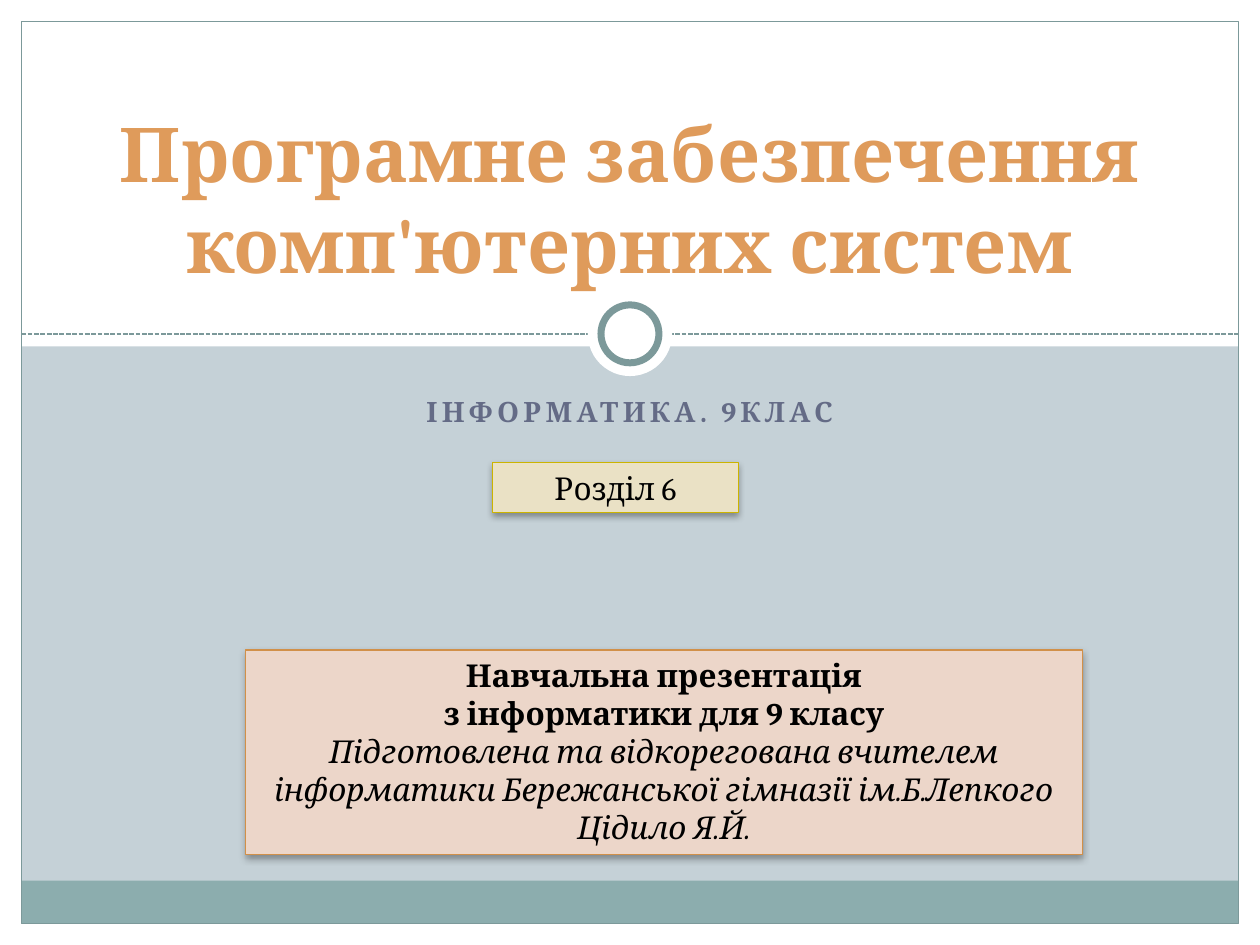
from dataclasses import dataclass

from lxml import etree
from pptx import Presentation
from pptx import util as u
from pptx.dml.color import RGBColor
from pptx.enum import dml, shapes, text
from pptx.oxml.ns import qn


@dataclass(frozen=True)
class Theme:
    font: str = "Cambria"
    white: str = "FFFFFF"
    background: str = "C5D1D7"
    teal: str = "7C999A"
    footer: str = "8CADAE"
    title: str = "DF9B5B"
    subtitle: str = "646B86"
    ink: str = "000000"
    chapter_fill: str = "EAE1C5"
    chapter_line: str = "CCB400"
    credit_fill: str = "ECD6C9"
    credit_line: str = "D19049"
    title_size: float = 43.2
    subtitle_size: float = 16
    body_size: float = 18
    hairline: float = 0.75


THEME = Theme()
WIDTH, HEIGHT, MARGIN = 10, 7.5, 0.17
RIGHT, BOTTOM = WIDTH - MARGIN, HEIGHT - MARGIN
CENTRE, DIVIDER = WIDTH / 2, 2.65


def rgb(value):
    return RGBColor.from_string(value)


def add_block(slide, box, fill=None, line=None, line_width=THEME.hairline,
              kind=shapes.MSO_SHAPE.RECTANGLE):
    shape = slide.shapes.add_shape(kind, *map(u.Inches, box))
    shape.shadow.inherit = False
    if fill:
        shape.fill.solid()
        shape.fill.fore_color.rgb = rgb(fill)
    else:
        shape.fill.background()
    if line:
        shape.line.color.rgb = rgb(line)
        shape.line.width = u.Pt(line_width)
    else:
        shape.line.fill.background()
    return shape


def add_circle(slide, diameter, **style):
    """Draw a circle centred on the divider."""
    box = (CENTRE - diameter / 2, DIVIDER - diameter / 2, diameter, diameter)
    return add_block(slide, box, kind=shapes.MSO_SHAPE.OVAL, **style)


def add_divider(slide):
    ends = (MARGIN, DIVIDER, RIGHT, DIVIDER)
    connector = slide.shapes.add_connector(
        shapes.MSO_CONNECTOR.STRAIGHT, *map(u.Inches, ends))
    connector.line.color.rgb = rgb(THEME.teal)
    connector.line.width = u.Pt(0.9)
    connector.line.dash_style = dml.MSO_LINE.SQUARE_DOT
    etree.SubElement(connector._element.spPr, qn("a:effectLst"))


def add_soft_shadow(shape):
    effects = shape._element.spPr.find(qn("a:effectLst"))
    shadow = etree.SubElement(
        effects, qn("a:outerShdw"), blurRad=str(u.Pt(4)), dist=str(u.Pt(2)),
        dir="5400000", algn="ctr", rotWithShape="0")
    colour = etree.SubElement(shadow, qn("a:srgbClr"), val=THEME.ink)
    etree.SubElement(colour, qn("a:alpha"), val="35000")


def write(shape, lines, size, colour, anchor=text.MSO_ANCHOR.TOP):
    """Fill a shape with centred lines given as (wording, bold, italic)."""
    frame = shape.text_frame
    frame.word_wrap = True
    frame.vertical_anchor = anchor
    for index, (wording, bold, italic) in enumerate(lines):
        paragraph = frame.add_paragraph() if index else frame.paragraphs[0]
        paragraph.add_run().text = wording
        paragraph.alignment = text.PP_ALIGN.CENTER
        font = paragraph.font
        font.name, font.size = THEME.font, u.Pt(size)
        font.bold, font.italic = bold, italic
        font.color.rgb = rgb(colour)


def add_heading(slide, box, wording, size, colour, anchor=text.MSO_ANCHOR.TOP):
    shape = slide.shapes.add_textbox(*map(u.Inches, box))
    write(shape, [(wording, True, False)], size, colour, anchor)
    return shape


def add_card(slide, box, lines, fill, line):
    shape = add_block(slide, box, fill, line)
    add_soft_shadow(shape)
    write(shape, lines, THEME.body_size, THEME.ink)


def add_frame(slide):
    """Draw the white header and margins, footer band, border and ring."""
    for box in ((0, BOTTOM, WIDTH, MARGIN), (RIGHT, 0, MARGIN, HEIGHT),
                (0, 0, MARGIN, HEIGHT), (0, 0, WIDTH, 2.75)):
        add_block(slide, box, THEME.white)
    inner_width = RIGHT - MARGIN
    add_block(slide, (MARGIN, BOTTOM - 0.34, inner_width, 0.34), THEME.footer)
    add_divider(slide)
    add_block(slide, (MARGIN, MARGIN, inner_width, BOTTOM - MARGIN),
              line=THEME.teal)
    add_circle(slide, 0.67, fill=THEME.white)
    add_circle(slide, 0.46, fill=THEME.white, line=THEME.teal, line_width=4)


def main():
    presentation = Presentation()
    presentation.slide_width = u.Inches(WIDTH)
    presentation.slide_height = u.Inches(HEIGHT)
    slide = presentation.slides.add_slide(presentation.slide_layouts[6])
    slide.background.fill.solid()
    slide.background.fill.fore_color.rgb = rgb(THEME.background)

    add_frame(slide)
    subtitle = add_heading(slide, (1.5, 3.08, 7, 0.67), "ІНФОРМАТИКА. 9КЛАС",
                           THEME.subtitle_size, THEME.subtitle)
    letter_spacing = subtitle.text_frame.paragraphs[0].runs[0].font
    letter_spacing._element.set("spc", "250")
    add_heading(slide, (0.75, 0.42, 8.5, 1.92),
                "Програмне забезпечення комп'ютерних систем",
                THEME.title_size, THEME.title, text.MSO_ANCHOR.BOTTOM)
    add_card(slide, (3.91, 3.67, 1.95, 0.4), [("Розділ 6", False, False)],
             THEME.chapter_fill, THEME.chapter_line)
    add_card(slide, (1.95, 5.16, 6.64, 1.62), [
        ("Навчальна презентація", True, False),
        ("з інформатики для 9 класу", True, False),
        ("Підготовлена та відкорегована вчителем", False, True),
        ("інформатики Бережанської гімназії ім.Б.Лепкого", False, True),
        ("Цідило Я.Й.", False, True),
    ], THEME.credit_fill, THEME.credit_line)
    presentation.save("out.pptx")


if __name__ == "__main__":
    main()
